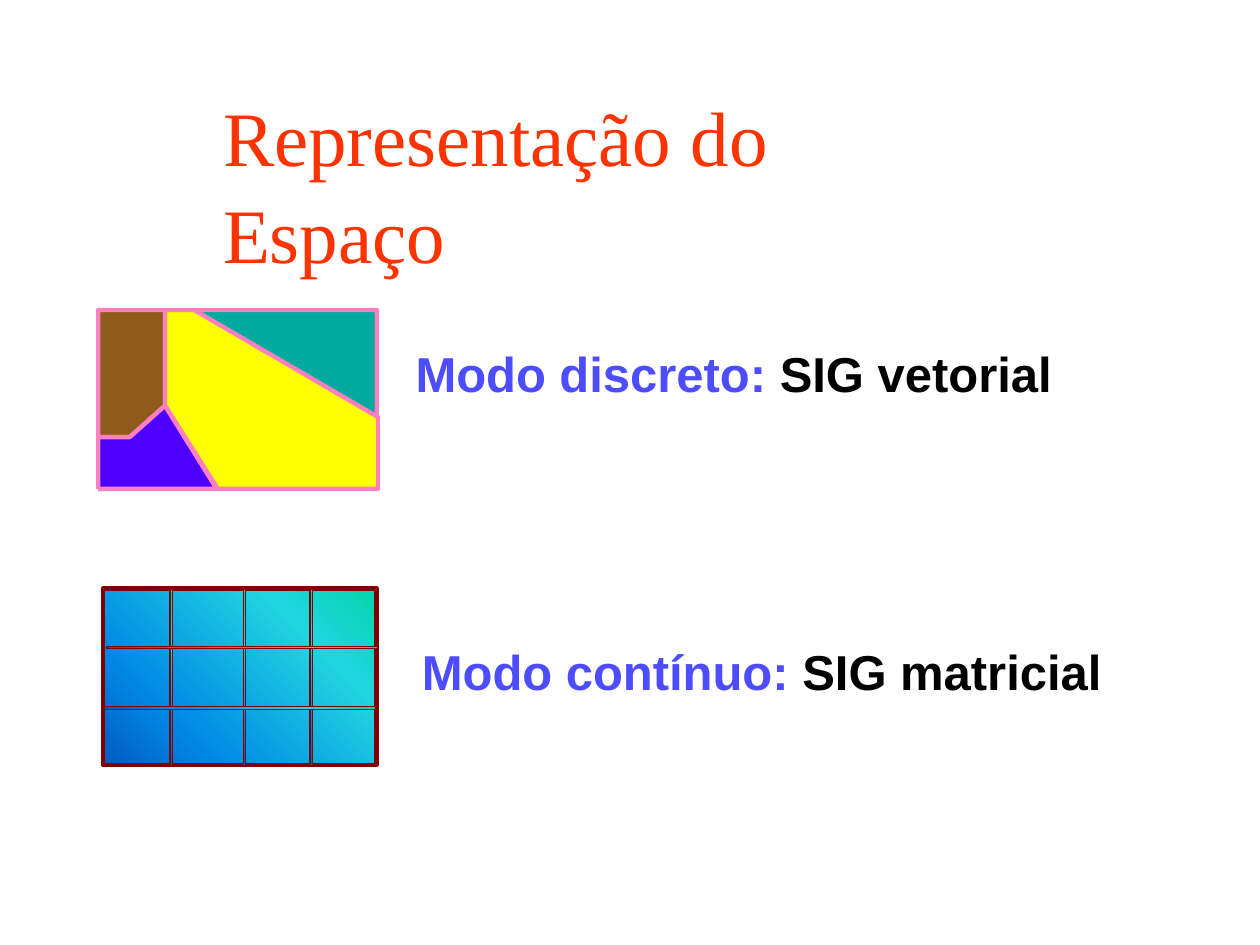
from dataclasses import dataclass
from lxml.etree import SubElement
from pptx import Presentation
from pptx.dml.color import RGBColor
from pptx.enum.text import MSO_ANCHOR, MSO_AUTO_SIZE, PP_ALIGN
from pptx.oxml.ns import qn
from pptx.shapes.autoshape import Shape
from pptx.shapes.shapetree import GroupShapes
from pptx.enum.shapes import MSO_SHAPE
from pptx.text.text import Font
from pptx.util import Inches, Pt

COLUMNS, ROWS = 100, 75
BORDER, GRID_LINE = "FF80C0", "800000"
GRADIENT = [(0, "005CBF"), (25, "0087E6"), (75, "21D6E0"), (100, "03D4A8")]

deck = Presentation()
deck.slide_width, deck.slide_height = Inches(10), Inches(7.5)


@dataclass
class Box:
    column: float
    row: float
    width: float
    height: float


@dataclass
class Region:
    color: str
    points: list[tuple[float, float]]
    closed_border: bool = False


@dataclass
class Caption:
    box: Box
    mode: str
    system: str


def across(columns: float) -> int:
    return round(deck.slide_width * columns / COLUMNS)


def down(rows: float) -> int:
    return round(deck.slide_height * rows / ROWS)


def bounds(box: Box) -> tuple[int, int, int, int]:
    return across(box.column), down(box.row), across(box.width), down(box.height)


def rgb(color: str) -> RGBColor:
    return RGBColor.from_string(color)


def style_font(font: Font, name: str, size: float, color: str, bold: bool = False) -> None:
    font.name, font.size, font.bold = name, Pt(size), bold
    font.color.rgb = rgb(color)


def paint(shape: Shape, fill: str | None, border: str | None, weight: float = 2.5) -> None:
    shape.shadow.inherit = False
    if fill:
        shape.fill.solid()
        shape.fill.fore_color.rgb = rgb(fill)
    else:
        shape.fill.background()
    if border:
        shape.line.color.rgb = rgb(border)
        shape.line.width = Pt(weight)
    else:
        shape.line.fill.background()


def draw_outline(shapes: GroupShapes, points: list[tuple[float, float]], close: bool) -> Shape:
    corners = [(across(column), down(row)) for column, row in points]
    builder = shapes.build_freeform(*corners[0], scale=1.0)
    builder.add_line_segments(corners[1:], close=close)
    return builder.convert_to_shape()


def draw_region(shapes: GroupShapes, region: Region) -> None:
    area = draw_outline(shapes, region.points, True)
    paint(area, region.color, BORDER if region.closed_border else None)
    if not region.closed_border:
        paint(draw_outline(shapes, region.points, False), None, BORDER)


def draw_gradient_box(shapes: GroupShapes, box: Box, weight: float) -> None:
    shape = shapes.add_shape(MSO_SHAPE.RECTANGLE, *bounds(box))
    paint(shape, None, GRID_LINE, weight)
    shape.fill.gradient()
    shape.fill.gradient_angle = 45
    stops = shape.fill._fill._gradFill.find(qn("a:gsLst"))
    for stop in list(stops):
        stops.remove(stop)
    for percent, color in GRADIENT:
        stop = SubElement(stops, qn("a:gs"), pos=str(percent * 1000))
        SubElement(stop, qn("a:srgbClr"), val=color)


def write_caption(caption: Caption) -> None:
    frame = slide.shapes.add_textbox(*bounds(caption.box)).text_frame
    frame.word_wrap = False
    paragraph = frame.paragraphs[0]
    for wording, color in ((caption.mode, "4D4DFF"), (caption.system, "000000")):
        run = paragraph.add_run()
        run.text = wording
        style_font(run.font, "Arial", 28, color, True)


slide = deck.slides.add_slide(deck.slide_layouts[5])
title = slide.shapes.title
title.left, title.top, title.width, title.height = bounds(Box(16.7, 6.2, 62, 8.3))
heading = title.text_frame
heading.text = "Representação do Espaço"
heading.word_wrap = True
heading.auto_size = MSO_AUTO_SIZE.NONE
heading.vertical_anchor = MSO_ANCHOR.TOP
heading.paragraphs[0].alignment = PP_ALIGN.LEFT
heading.paragraphs[0].line_spacing = 1.05
style_font(heading.paragraphs[0].runs[0].font, "Times New Roman", 44, "FF3300")

for caption in (
    Caption(Box(32, 26.8, 52.6, 9.7), "Modo discreto: ", "SIG vetorial"),
    Caption(Box(32.5, 50.4, 56.1, 5.7), "Modo contínuo: ", "SIG matricial"),
):
    write_caption(caption)

vector_map = slide.shapes.add_group_shape().shapes
left_edge = vector_map.add_shape(MSO_SHAPE.RECTANGLE, *bounds(Box(7.8, 27.5, 0.3, 11.5)))
paint(left_edge, BORDER, None)
for region in (
    Region("8F5B1A", [(7.8, 24.6), (13.1, 24.6), (13.1, 32.2), (10.3, 34.7),
                      (7.8, 34.7), (7.8, 24.6), (8, 24.6)]),
    Region("00AA9E", [(29.9, 33.1), (15.1, 24.6), (29.9, 24.6), (29.9, 32.9)]),
    Region("FFFF00", [(13.1, 24.6), (15.4, 24.6), (30, 33.1), (30, 38.8),
                      (17.3, 38.8), (13.1, 32.2)], True),
    Region("4D00FF", [(7.8, 38.8), (7.8, 34.7), (10.3, 34.7), (13.1, 32.2),
                      (17.2, 38.8), (8, 38.8)]),
):
    draw_region(vector_map, region)

raster_map = slide.shapes.add_group_shape().shapes
draw_gradient_box(raster_map, Box(8.2, 46.7, 21.7, 14), 2.5)
for column in (13.5, 19.3, 24.6):
    draw_gradient_box(raster_map, Box(column, 46.8, 0.2, 14), 0.75)
for column, row in ((8.5, 51.3), (8.3, 56.1)):
    draw_gradient_box(raster_map, Box(column, row, 21.5, 0.2), 0.75)

deck.save("out.pptx")
